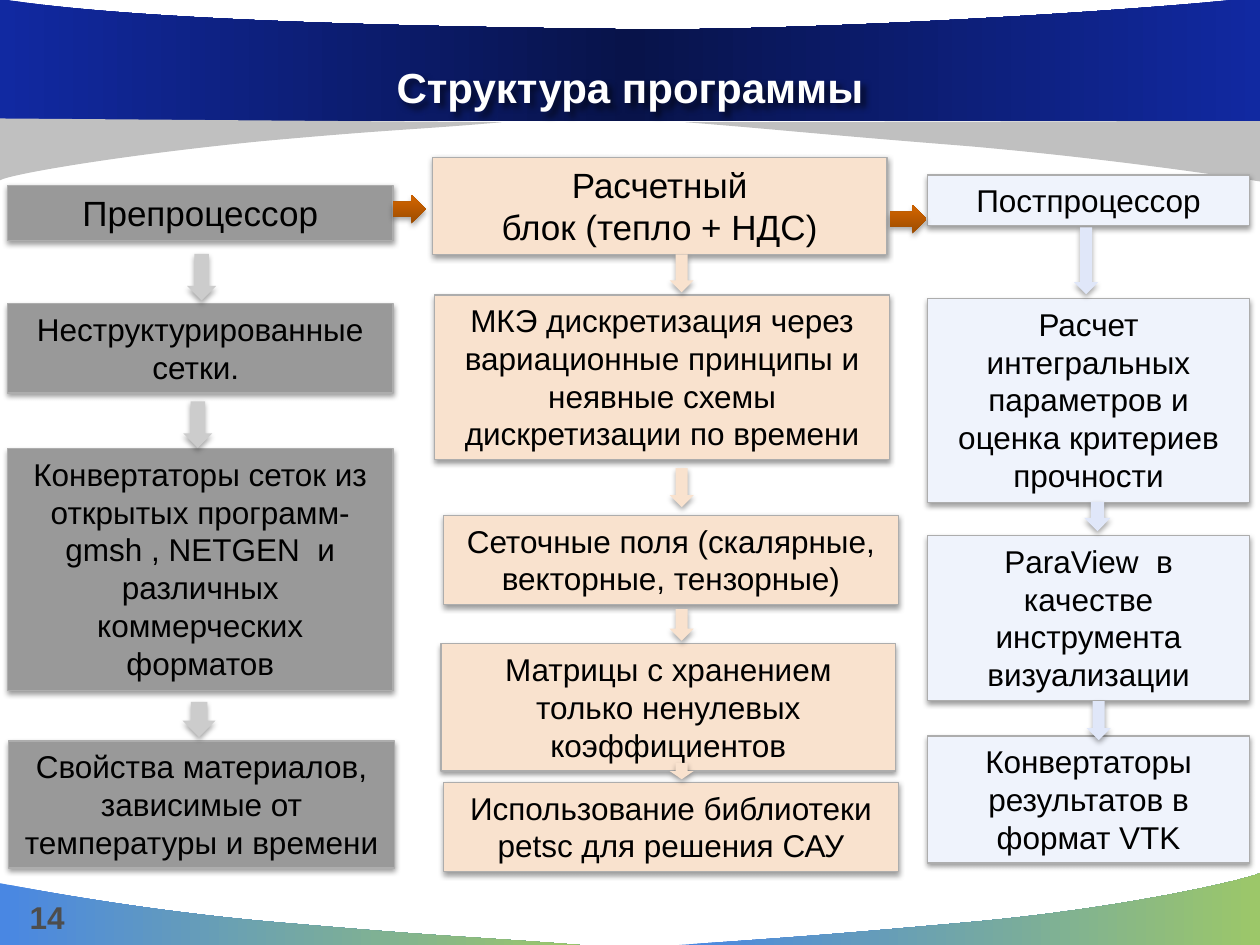
from lxml import etree
from pptx import Presentation
from pptx import util as u
from pptx.dml.color import RGBColor
from pptx.enum import shapes, text
from pptx.oxml.ns import qn

COLS, ROWS = 10, 7.5
CELL = u.Inches(1)
FINE = 100
FONT = "Arial"
COLORS = {
    "white": "FFFFFF", "black": "000000", "number": "4D4D4D", "edge": "ADADAD",
    "swoosh": "C0C0C0", "sky": "4987E3", "leaf": "9CC769",
    "blue": "1129A1", "navy": "08134A", "rust": "9B4B00",
    "amber": "CA6100", "orange": "CA6200",
    "pre": "999999", "pre_arrow": "CCCCCC", "solver": "F9E2CE",
    "post": "EFF3FC", "post_arrow": "E0E7F9",
}
FOOTER = [(0, "sky"), (100, "leaf")]
BANNER = [(0, "blue"), (50, "navy"), (100, "blue")]
ORANGE = [(0, "rust"), (80, "amber"), (100, "orange")]

SWOOSHES = [
    (FOOTER, [(4.6, 7.5), (3.84, 7.44, 3.58, 7.44, 2.32, 7.33),
              (1.06, 7.23, 0.02, 7.01, 0, 7.01), (0, 7.5)]),
    (FOOTER, [(5.39, 7.5), (6.14, 7.45, 6.46, 7.43, 7.69, 7.32),
              (8.92, 7.21, 9.9, 6.98, 10, 6.93), (10, 7.5)]),
    ("swoosh", [(5.44, 0.97), (6.2, 1.03, 6.42, 1.06, 7.68, 1.16),
                (8.94, 1.27, 9.99, 1.44, 10, 1.44), (10, 0.96)]),
    (BANNER, [(0, 0.96), (10, 0.96), (10, -0.03),
              (9.64, 0.04, 6.53, 0.26, 4.87, 0.23),
              (3.21, 0.21, 1.01, 0.16, 0, -0.01)]),
    ("swoosh", [(3.98, 0.97), (3.31, 1.03, 3.18, 1.02, 2.08, 1.12),
                (0.97, 1.23, 0.09, 1.38, 0, 1.43), (0, 0.94)]),
]

STAGES = [
    ("pre", 3.06, [
        (0.06, 1.47, 0.44, 20, ["Препроцессор"]),
        (0.06, 2.41, 0.71, 18, ["Неструктурированные сетки. "]),
        (0.06, 3.56, 1.92, 18, ["Конвертаторы сеток из открытых программ- gmsh , "
                                "NETGEN  и различных коммерческих форматов"]),
        (0.07, 5.88, 1.01, 18, ["Свойства материалов, зависимые от температуры и времени"]),
    ], "pre_arrow", [(1.6, 2.2, 0.37, 0.23), (1.57, 3.37, 0.37, 0.23), (1.58, 5.71, 0.28, 0.26)]),
    ("solver", 3.61, [
        (3.43, 1.25, 0.77, 20, ["Расчетный", "блок (тепло + НДС)"]),
        (3.45, 2.34, 1.31, 18, ["МКЭ дискретизация через вариационные принципы и "
                                "неявные схемы дискретизации по времени"]),
        (3.52, 4.09, 0.71, 18, ["Сеточные поля (скалярные, векторные, тензорные)"]),
        (3.5, 5.11, 1.01, 18, ["Матрицы с хранением только ненулевых коэффициентов"]),
        (3.52, 6.21, 0.71, 18, ["Использование библиотеки petsc для решения САУ"]),
    ], "solver", [(5.41, 2.17, 0.3, 0.19), (5.41, 3.87, 0.31, 0.19),
                  (5.41, 4.96, 0.25, 0.19), (5.41, 6.12, 0.13, 0.19)]),
    ("post", 2.56, [
        (7.36, 1.39, 0.4, 18, ["Постпроцессор"]),
        (7.36, 2.37, 1.62, 18, ["Расчет интегральных параметров и оценка критериев прочности"]),
        (7.36, 4.25, 1.31, 18, ["ParaView  в качестве инструмента визуализации"]),
        (7.36, 5.84, 1.01, 18, ["Конвертаторы результатов в формат VTK"]),
    ], "post_arrow", [(8.62, 2.07, 0.53, 0.19), (8.71, 4.1, 0.23, 0.21), (8.72, 5.72, 0.31, 0.19)]),
]
LINKS = [(3.25, 1.66, 0.26, 0.23), (7.21, 1.74, 0.29, 0.23)]


def cells(*counts):
    """Turn grid counts into slide lengths."""
    return [int(n * CELL) for n in counts]


def rgb(name):
    """Look up a named colour."""
    return RGBColor.from_string(COLORS[name])


def add_shadow(sp, blur, dist, alpha, angle=90):
    """Give a shape a soft black shadow."""
    sp.shadow.inherit = False
    effects = sp._element.spPr.find(qn("a:effectLst"))
    shadow = etree.SubElement(effects, qn("a:outerShdw"), blurRad=str(u.Pt(blur)),
                              dist=str(u.Pt(dist)), dir=str(angle * 60000), rotWithShape="0")
    color = etree.SubElement(shadow, qn("a:srgbClr"), val=COLORS["black"])
    etree.SubElement(color, qn("a:alpha"), val=str(alpha * 1000))


def paint(sp, fill, angle=0, edge=None):
    """Set fill and line of a shape and drop its theme shadow."""
    sp.shadow.inherit = False
    if isinstance(fill, str):
        sp.fill.solid()
        sp.fill.fore_color.rgb = rgb(fill)
    else:
        sp.fill.gradient()
        sp.fill.gradient_angle = angle
        stops = sp._element.spPr.find(qn("a:gradFill")).find(qn("a:gsLst"))
        for old in list(stops):
            stops.remove(old)
        for place, name in fill:
            stop = etree.SubElement(stops, qn("a:gs"), pos=str(place * 1000))
            etree.SubElement(stop, qn("a:srgbClr"), val=COLORS[name])
    if edge:
        sp.line.color.rgb = rgb(edge)
        sp.line.width = u.Pt(0.75)
    else:
        sp.line.fill.background()


def write(tf, lines, size, color, bold=False, spacing=None):
    """Write centred paragraphs into a text frame."""
    tf.word_wrap = True
    for i, line in enumerate(lines):
        p = tf.add_paragraph() if i else tf.paragraphs[0]
        p.alignment = text.PP_ALIGN.CENTER
        p.line_spacing = spacing
        r = p.add_run()
        r.text = line
        r.font.size, r.font.bold, r.font.name = u.Pt(size), bold, FONT
        r.font.color.rgb = rgb(color)


def add_swoosh(s, fill, segments):
    """Draw a background band from points and Bézier segments."""
    ends = [(x * FINE, y * FINE) for *_, x, y in segments]
    left, top = (min(values) for values in zip(*ends))
    builder = s.shapes.build_freeform(*ends[0], scale=CELL / FINE)
    builder.add_line_segments(ends[1:], close=True)
    sp = builder.convert_to_shape()
    lines = list(sp._element.spPr.iter(qn("a:lnTo")))
    for line, seg in zip(lines, segments[1:]):
        if len(seg) == 6:
            curve = etree.Element(qn("a:cubicBezTo"))
            for x, y in zip(seg[::2], seg[1::2]):
                etree.SubElement(curve, qn("a:pt"), x=str(round(x * FINE - left)),
                                 y=str(round(y * FINE - top)))
            line.getparent().replace(line, curve)
    paint(sp, fill)


def add_label(s, box, line, size, color, spacing=None):
    """Add a bold one-line label without insets."""
    sp = s.shapes.add_textbox(*cells(*box))
    tf = sp.text_frame
    tf.margin_left = tf.margin_right = tf.margin_top = tf.margin_bottom = 0
    tf.vertical_anchor = text.MSO_ANCHOR.MIDDLE
    write(tf, [line], size, color, True, spacing)
    return sp


def add_box(s, box, fill, size, lines):
    """Add a bordered block with text."""
    sp = s.shapes.add_shape(shapes.MSO_SHAPE.RECTANGLE, *cells(*box))
    paint(sp, fill, edge="edge")
    add_shadow(sp, 3.15, 1.57, 38)
    tf = sp.text_frame
    tf.vertical_anchor = text.MSO_ANCHOR.TOP
    tf.auto_size = text.MSO_AUTO_SIZE.SHAPE_TO_FIT_TEXT
    write(tf, lines, size, "black")


def add_arrow(s, arrow, fill, rotation=0):
    """Add a block arrow around its centre."""
    x, y, length, thick = arrow
    box = cells(x - length / 2, y - thick / 2, length, thick)
    sp = s.shapes.add_shape(shapes.MSO_SHAPE.RIGHT_ARROW, *box)
    sp.rotation = rotation
    paint(sp, fill, angle=90)
    add_shadow(sp, 3.15, 1.81, 35)


def main():
    """Build the program structure slide."""
    prs = Presentation()
    prs.slide_width, prs.slide_height = cells(COLS, ROWS)
    s = prs.slides.add_slide(prs.slide_layouts[6])
    for fill, segments in SWOOSHES:
        add_swoosh(s, fill, segments)
    title = add_label(s, (0, 0.52, COLS, 0.4), "Структура программы", 24, "white", 0.85)
    add_shadow(title, 3, 3, 50, 45)
    add_label(s, (0.04, 7.18, 0.67, 0.2), "14", 18, "number")
    for fill, width, boxes, arrow_fill, arrows in STAGES:
        for left, top, height, size, lines in boxes:
            add_box(s, (left, top, width, height), fill, size, lines)
        for arrow in arrows:
            add_arrow(s, arrow, arrow_fill, 90)
    for link in LINKS:
        add_arrow(s, link, ORANGE)
    prs.save("out.pptx")


if __name__ == "__main__":
    main()
